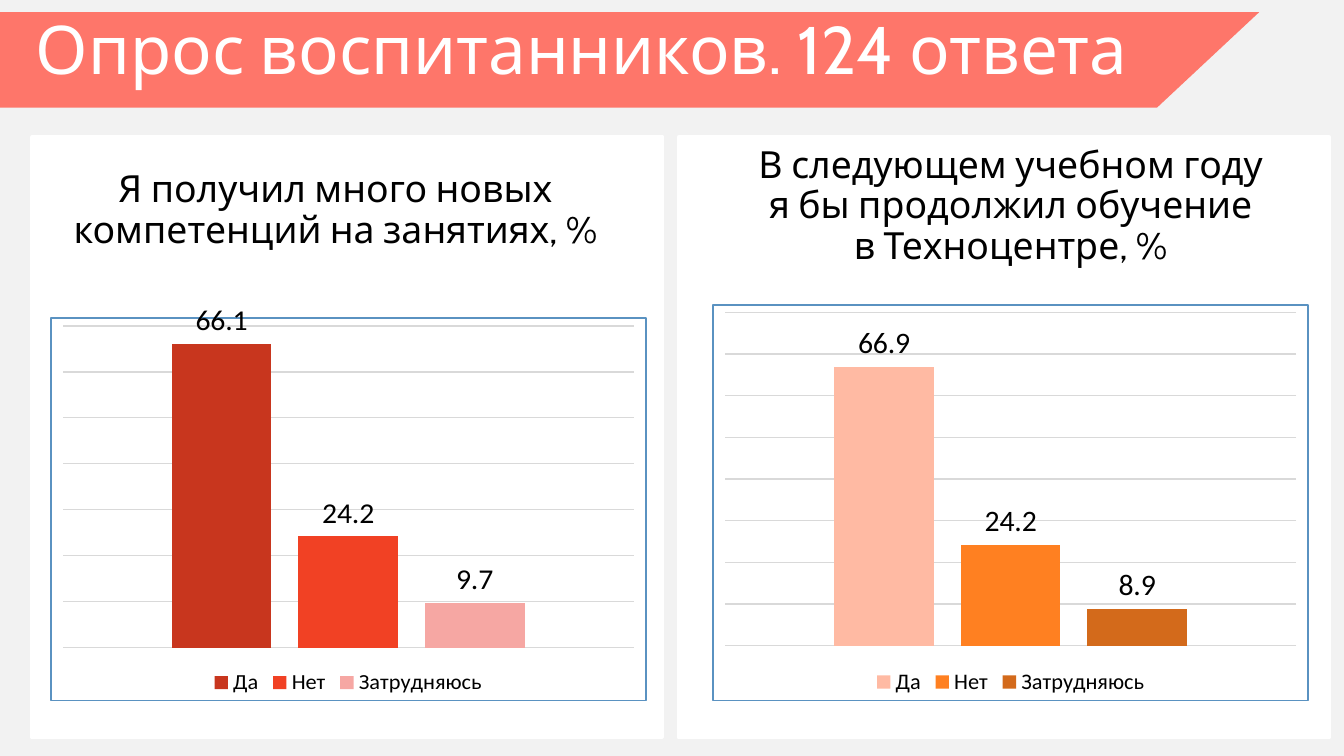
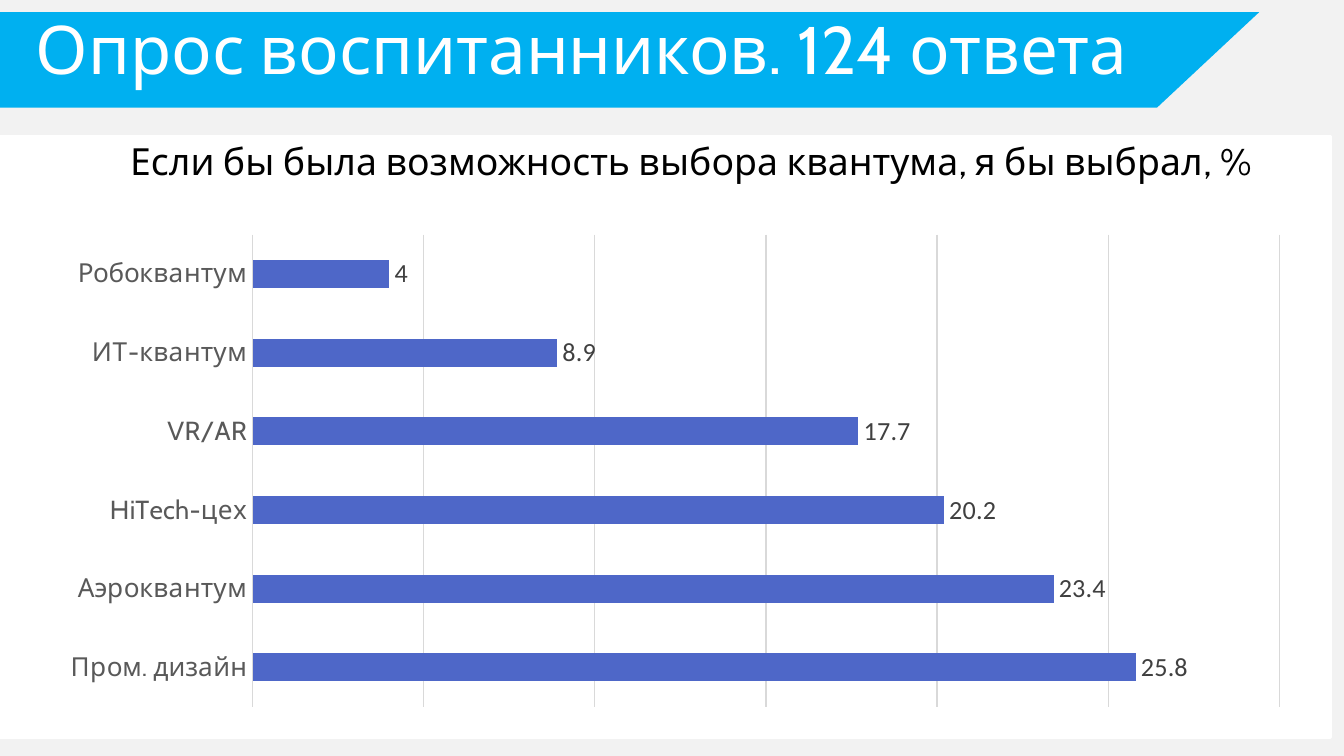
from lxml import etree
from pptx import Presentation
from pptx.chart.data import CategoryChartData
from pptx.dml.color import RGBColor
from pptx.enum.chart import XL_CHART_TYPE, XL_LABEL_POSITION, XL_LEGEND_POSITION, XL_TICK_MARK
from pptx.enum.shapes import MSO_SHAPE
from pptx.enum.text import MSO_ANCHOR, MSO_AUTO_SIZE, PP_ALIGN
from pptx.oxml import parse_xml
from pptx.oxml.ns import nsdecls, qn
from pptx.util import Pt

WHITE = RGBColor(0xFF, 0xFF, 0xFF)
BLACK = RGBColor(0, 0, 0)
PAPER = RGBColor(0xF2, 0xF2, 0xF2)
GRID = RGBColor(0xD9, 0xD9, 0xD9)
AXIS_TEXT = RGBColor(0x59, 0x59, 0x59)
LABEL_TEXT = RGBColor(0x40, 0x40, 0x40)
FRAME = RGBColor(0x5A, 0x92, 0xC1)
CORAL = RGBColor(0xFE, 0x76, 0x6A)
SKY = RGBColor(0x00, 0xB0, 0xF0)
INDIGO = RGBColor(0x4E, 0x67, 0xC8)
REDS = [RGBColor(0xC8, 0x36, 0x1E), RGBColor(0xF1, 0x41, 0x24), RGBColor(0xF6, 0xA7, 0xA3)]
ORANGES = [RGBColor(0xFF, 0xBA, 0xA3), RGBColor(0xFF, 0x80, 0x21), RGBColor(0xD3, 0x6A, 0x1B)]

HEAD_FONT = "Cabin"
DATA_FONT = "Calibri"
TITLE = "Опрос воспитанников. 124 ответа"
ANSWERS = ["Да", "Нет", "Затрудняюсь"]
PANEL_TOP, PANEL_HEIGHT = 73.4, 321.8
HEAD_HEIGHT = 46.8


def place(box, offset):
    """Return an offset box in slide points, measured from the corner of box."""
    return (box[0] + offset[0], box[1] + offset[1], *offset[2:])


def pts(box):
    """Convert a box of numbers to lengths."""
    return [Pt(v) for v in box]


def set_font(font, name, size, color):
    """Set the face, size and colour of a font."""
    font.name = name
    font.size = Pt(size)
    font.color.rgb = color


def write_lines(tf, lines, size, color):
    """Write centred heading lines, one paragraph each."""
    tf.word_wrap = True
    tf.auto_size = MSO_AUTO_SIZE.NONE
    tf.vertical_anchor = MSO_ANCHOR.TOP
    for i, line in enumerate(lines):
        p = tf.paragraphs[0] if i == 0 else tf.add_paragraph()
        p.alignment = PP_ALIGN.CENTER
        p.line_spacing = 0.9
        p.space_before = Pt(0)
        r = p.add_run()
        r.text = line
        set_font(r.font, HEAD_FONT, size, color)


def add_survey_slide(prs, color):
    """Add a slide with the title on its slanted band."""
    s = prs.slides.add_slide(prs.slide_layouts[5])
    s.background.fill.solid()
    s.background.fill.fore_color.rgb = PAPER
    band = s.shapes.add_shape(MSO_SHAPE.PARALLELOGRAM, *pts((-56.2, 6.5, 730.8, 51.1)))
    band.adjustments[0] = 1.07
    band.shadow.inherit = False
    band.fill.solid()
    band.fill.fore_color.rgb = color
    band.line.fill.background()
    title = s.shapes.title
    title.left, title.top, title.width, title.height = pts((-24.5, 5, 672.5, 46.8))
    write_lines(title.text_frame, [TITLE], 36, WHITE)
    band.element.addnext(title.element)
    return s


def add_panel(s, box, heading, head_offset):
    """Draw a white panel with its heading."""
    sp = s.shapes.add_shape(MSO_SHAPE.RECTANGLE, *pts(box))
    sp.shadow.inherit = False
    sp.fill.solid()
    sp.fill.fore_color.rgb = WHITE
    sp.line.color.rgb = WHITE
    sp.line.width = Pt(2)
    tb = s.shapes.add_textbox(*pts(place(box, head_offset)))
    write_lines(tb.text_frame, heading, 20, BLACK)


def add_bars(s, box, kind, cats, series, colors, gap, label_size, label_color, peak, step):
    """Add a clustered chart with value labels and a hidden value axis."""
    data = CategoryChartData()
    data.categories = cats
    for name, values in series:
        data.add_series(name, values)
    chart = s.shapes.add_chart(kind, *pts(box), data).chart
    set_font(chart.font, DATA_FONT, 10, BLACK)
    chart.has_title = False
    chart.has_legend = False
    plot = chart.plots[0]
    plot.gap_width = gap
    plot.vary_by_categories = False
    for ser, color in zip(plot.series, colors):
        ser.format.fill.solid()
        ser.format.fill.fore_color.rgb = color
        ser.invert_if_negative = False
        labels = ser.data_labels
        labels.show_value = True
        labels.position = XL_LABEL_POSITION.OUTSIDE_END
        set_font(labels.font, DATA_FONT, label_size, label_color)
    axis = chart.value_axis
    axis.visible = False
    axis.minimum_scale, axis.maximum_scale, axis.major_unit = 0, peak, step
    axis.has_major_gridlines = True
    line = axis.major_gridlines.format.line
    line.color.rgb = GRID
    line.width = Pt(0.75)
    return chart


def frame_chart(chart):
    """Give the chart area a white fill and a thin border."""
    area = parse_xml(
        f'<c:spPr {nsdecls("c", "a")}>'
        f'<a:solidFill><a:srgbClr val="{WHITE}"/></a:solidFill>'
        f'<a:ln w="{Pt(1)}"><a:solidFill><a:srgbClr val="{FRAME}"/></a:solidFill></a:ln>'
        '</c:spPr>')
    chart._chartSpace.find(qn("c:chart")).addnext(area)


def fix_plot(chart, x, y, w, h):
    """Set the inner plot area as fractions of the chart."""
    area = chart._chartSpace.find(qn("c:chart")).find(qn("c:plotArea"))
    for old in area.findall(qn("c:layout")):
        area.remove(old)
    layout = etree.Element(qn("c:layout"))
    manual = etree.SubElement(layout, qn("c:manualLayout"))
    settings = [("layoutTarget", "inner"), ("xMode", "edge"), ("yMode", "edge"),
                ("x", x), ("y", y), ("w", w), ("h", h)]
    for tag, value in settings:
        etree.SubElement(manual, qn(f"c:{tag}")).set("val", str(value))
    area.insert(0, layout)


def answer_panel(s, box, heading, head_offset, chart_left, values, colors, peak):
    """Place a panel with the yes, no and unsure columns."""
    add_panel(s, box, heading, head_offset)
    series = [(name, [value]) for name, value in zip(ANSWERS, values)]
    chart = add_bars(s, place(box, (chart_left, 89.3, 319.7, 213.1)),
                     XL_CHART_TYPE.COLUMN_CLUSTERED, ["1"], series, colors,
                     219, 16, BLACK, peak, 10)
    chart.plots[0].overlap = -27
    chart.category_axis.visible = False
    chart.has_legend = True
    chart.legend.position = XL_LEGEND_POSITION.BOTTOM
    chart.legend.include_in_layout = False
    set_font(chart.legend.font, DATA_FONT, 12, BLACK)
    frame_chart(chart)


def choice_panel(s, box, heading, head_offset, choices):
    """Place a panel with one bar for each field of study."""
    add_panel(s, box, heading, head_offset)
    cats, values = zip(*choices)
    chart = add_bars(s, place(box, (34.6, 46.8, 671, 275)),
                     XL_CHART_TYPE.BAR_CLUSTERED, cats, [("Series 1", values)], [INDIGO],
                     182, 14, LABEL_TEXT, 30, 5)
    axis = chart.category_axis
    axis.major_tick_mark = XL_TICK_MARK.NONE
    axis.format.line.color.rgb = GRID
    axis.format.line.width = Pt(0.75)
    set_font(axis.tick_labels.font, HEAD_FONT, 14, AXIS_TEXT)
    fix_plot(chart, 0.15, 0.02, 0.82, 0.92)


def main():
    """Build both survey slides and save them."""
    prs = Presentation()
    prs.slide_width, prs.slide_height = Pt(720), Pt(405)

    s = add_survey_slide(prs, CORAL)
    answer_panel(s, (17.3, PANEL_TOP, 337.7, PANEL_HEIGHT),
                 ["Я получил много новых компетенций на занятиях, %"],
                 (-15.1, 14.4, 355, HEAD_HEIGHT), 9.4, [66.1, 24.2, 9.7], REDS, 70)
    answer_panel(s, (363.6, PANEL_TOP, 348.5, PANEL_HEIGHT),
                 ["В следующем учебном году", "я бы продолжил обучение", "в Техноцентре, %"],
                 (-17.3, 1.4, 390.2, HEAD_HEIGHT), 18, [66.9, 24.2, 8.9], ORANGES, 80)

    s = add_survey_slide(prs, SKY)
    choice_panel(s, (0, PANEL_TOP, 712.8, PANEL_HEIGHT),
                 ["Если бы была возможность выбора квантума, я бы выбрал, %"],
                 (8.6, 0, 722.9, HEAD_HEIGHT),
                 [("Пром. дизайн", 25.8), ("Аэроквантум", 23.4), ("HiTech-цех", 20.2),
                  ("VR/AR", 17.7), ("ИТ-квантум", 8.9), ("Робоквантум", 4)])
    prs.save("out.pptx")


if __name__ == "__main__":
    main()
